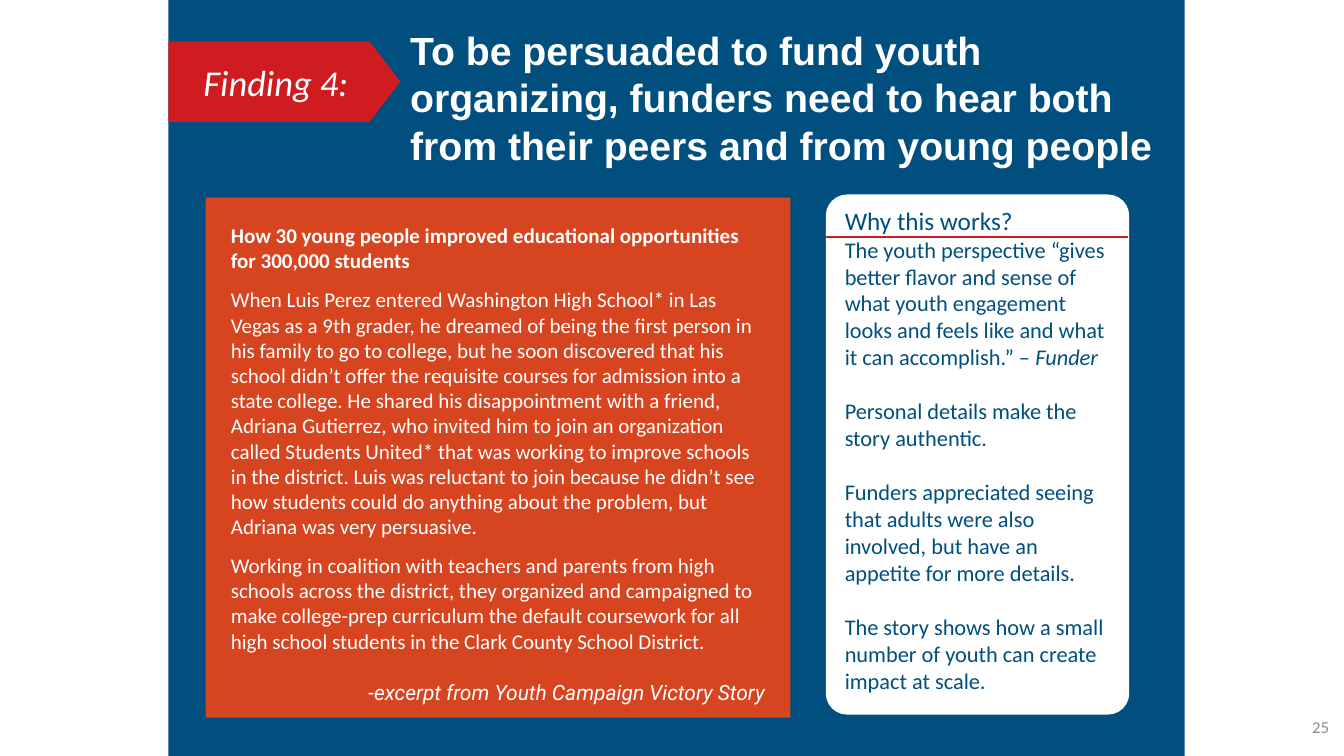
from dataclasses import dataclass
from lxml.etree import SubElement
from pptx import Presentation
from pptx.dml.color import RGBColor as RGB
from pptx.enum.shapes import MSO_CONNECTOR as Link, MSO_SHAPE as Kind
from pptx.enum.text import MSO_ANCHOR as Anchor, PP_ALIGN as Align
from pptx.oxml.ns import qn
from pptx.util import Inches, Pt


@dataclass(frozen=True)
class Theme:
    navy: str = "004F7E"
    white: str = "FFFFFF"
    red: str = "CF1C20"
    orange: str = "D74520"
    gray: str = "8C8C8C"
    body: str = "Calibri"
    head: str = "Arial"
    quote: str = "Roboto"
    title: int = 28
    tag: int = 26
    lead: int = 18
    tip: int = 16
    story: int = 15
    page: int = 12


class Deck:
    def __init__(self, slide, theme):
        self.slide = slide
        self.theme = theme

    def box(self, kind, area, fill, adj=None, host=None):
        host = host or self.slide
        shape = host.shapes.add_shape(kind, *map(Inches, area))
        shape.shadow.inherit = False
        shape.fill.solid()
        shape.fill.fore_color.rgb = RGB.from_string(fill)
        shape.line.fill.background()
        if adj is not None:
            shape.adjustments[0] = adj
        return shape

    def label(self, area, host=None):
        host = host or self.slide
        return host.shapes.add_textbox(*map(Inches, area))

    def frame(self, shape, anchor=Anchor.TOP, inset=None):
        frame = shape.text_frame
        frame.word_wrap = True
        frame.vertical_anchor = anchor
        if inset is not None:
            frame.margin_left = frame.margin_right = Inches(inset)
            frame.margin_top = frame.margin_bottom = Inches(inset)
        return frame

    def para(self, frame, runs, size, color, gap=0, align=Align.LEFT, indent=0):
        para = frame.paragraphs[0]
        if para.runs:
            para = frame.add_paragraph()
        para.alignment = align
        para.space_before = Pt(gap)
        if indent:
            props = para._p.get_or_add_pPr()
            props.set("marL", str(Inches(indent)))
            props.set("indent", "0")
        for text, style in runs:
            run = para.add_run()
            run.text = text
            font = run.font
            font.size = Pt(size)
            font.color.rgb = RGB.from_string(color)
            font.name = style.get("font", self.theme.body)
            font.bold = style.get("bold", False)
            font.italic = style.get("italic", False)

    def rule(self, start, end, color, host=None):
        host = host or self.slide
        line = host.shapes.add_connector(Link.STRAIGHT, *map(Inches, start + end))
        line.line.color.rgb = RGB.from_string(color)
        line.line.width = Pt(1)
        SubElement(line._element.spPr, qn("a:effectLst"))


STORY = [
    "When Luis Perez entered Washington High School* in Las Vegas as a 9th grader, "
    "he dreamed of being the first person in his family to go to college, but he soon "
    "discovered that his school didn’t offer the requisite courses for admission into "
    "a state college. He shared his disappointment with a friend, Adriana Gutierrez, "
    "who invited him to join an organization called Students United* that was working "
    "to improve schools in the district. Luis was reluctant to join because he didn’t "
    "see how students could do anything about the problem, but Adriana was very "
    "persuasive.",
    "Working in coalition with teachers and parents from high schools across the "
    "district, they organized and campaigned to make college-prep curriculum the "
    "default coursework for all high school students in the Clark County School "
    "District.",
]
TIPS = [
    "Personal details make the story authentic.",
    "Funders appreciated seeing that adults were also involved, but have an appetite "
    "for more details.",
    "The story shows how a small number of youth can create impact at scale.",
]


def main():
    show = Presentation()
    show.slide_width, show.slide_height = Inches(13.33), Inches(7.5)
    look = Theme()
    deck = Deck(show.slides.add_slide(show.slide_layouts[6]), look)

    deck.box(Kind.RECTANGLE, (1.67, 0, 10.08, 7.5), look.navy)

    page = deck.frame(deck.label((12.48, 6.93, 0.8, 0.57)), Anchor.MIDDLE, 0.1)
    deck.para(page, [("25", {})], look.page, look.gray, align=Align.RIGHT)

    panel = deck.slide.shapes.add_group_shape()
    deck.box(Kind.ROUNDED_RECTANGLE, (8.19, 1.93, 3.01, 5.16), look.white, 0.07, panel)
    why = deck.frame(deck.label((8.28, 1.99, 2.91, 4.98), panel))
    deck.para(why, [("Why this works?", {})], look.lead, look.navy)
    quote = (
        "The youth perspective “gives better flavor and sense of what youth engagement "
        "looks and feels like and what it can accomplish.” – "
    )
    deck.para(why, [(quote, {}), ("Funder", {"italic": True})], look.tip, look.navy)
    for tip in TIPS:
        deck.para(why, [(tip, {})], look.tip, look.navy, gap=19.5)
    deck.rule((8.19, 2.35), (11.19, 2.35), look.red, panel)

    tag = deck.box(Kind.PENTAGON, (1.67, 0.41, 2.3, 0.8), look.red, 0.38)
    deck.para(deck.frame(tag, Anchor.MIDDLE), [("Finding 4:", {"italic": True})],
              look.tag, look.white, indent=0.25)

    card = deck.box(Kind.RECTANGLE, (2.04, 1.96, 5.8, 5.16), look.orange)
    story = deck.frame(card, inset=0.25)
    lead = "How 30 young people improved educational opportunities for 300,000 students"
    deck.para(story, [(lead, {"bold": True})], look.story, look.white)
    for text in STORY:
        deck.para(story, [(text, {})], look.story, look.white, gap=9.8)
    credit = [
        ("-", {"font": look.quote}),
        ("excerpt from Youth Campaign Victory Story",
         {"font": look.quote, "italic": True}),
    ]
    deck.para(story, credit, look.story, look.white, gap=18.3, align=Align.RIGHT)

    title = deck.frame(deck.label((3.97, 0.27, 7.66, 1.39)), Anchor.MIDDLE, 0.1)
    claim = (
        "To be persuaded to fund youth organizing, funders need to hear both from "
        "their peers and from young people"
    )
    deck.para(title, [(claim, {"font": look.head, "bold": True})],
              look.title, look.white)

    show.save("out.pptx")


if __name__ == "__main__":
    main()
